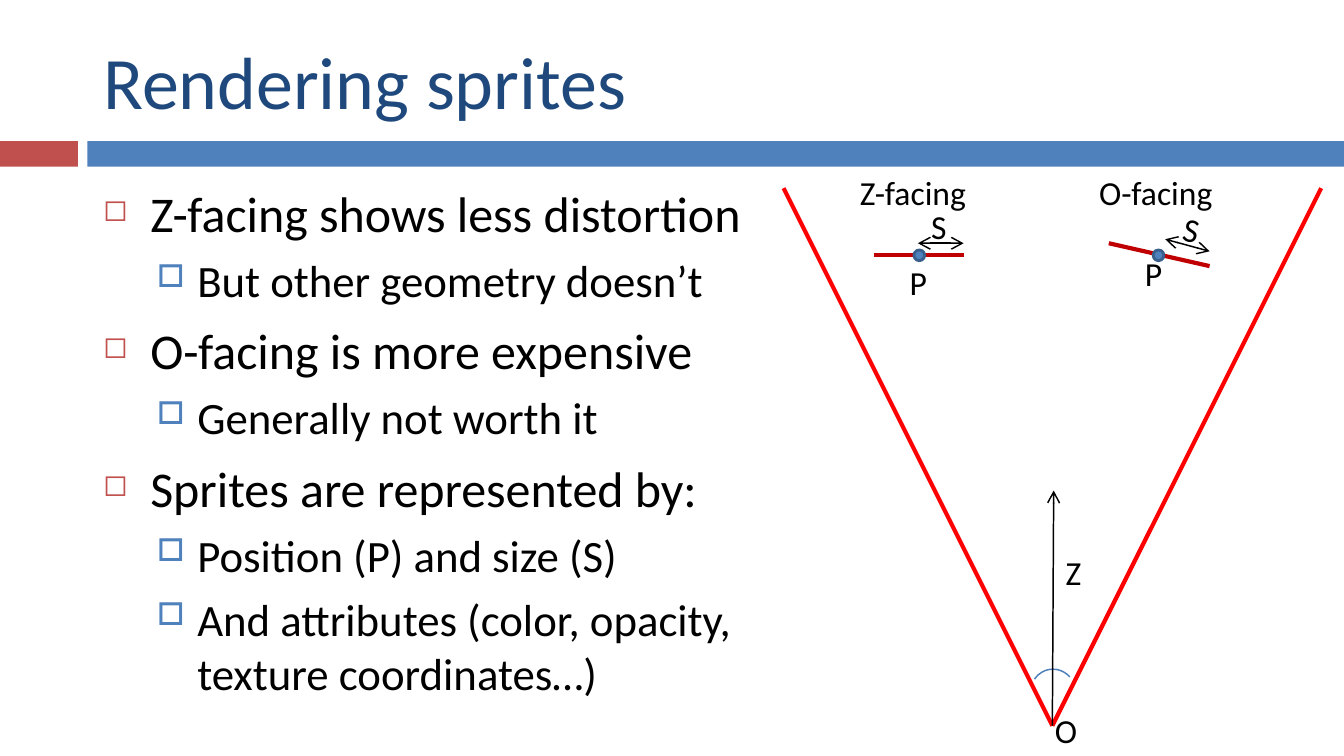
from pptx import Presentation
from pptx import util as u
from pptx.dml.color import RGBColor
from pptx.enum import shapes, text
from pptx.oxml.ns import qn
from lxml import etree

RED = RGBColor(0xC0, 0x50, 0x4D)
BLUE = RGBColor(0x4F, 0x81, 0xBD)
DARK_BLUE = RGBColor(0x3A, 0x5F, 0x8C)
NAVY = RGBColor(0x1F, 0x49, 0x7D)
BLACK = RGBColor(0, 0, 0)
FRUSTUM_RED = RGBColor(0xFF, 0, 0)
SPRITE_RED = RGBColor(0xC0, 0, 0)

# Paragraph formats by outline level
LEVELS = [
    dict(size=26.8, before=7, left=0.35, hanging=0.35, bullet="◻", color=RED, scale=60),
    dict(size=24.05, before=5.5, left=0.7, hanging=0.3, bullet="□", color=BLUE, scale=70),
]
POINTS = [
    (0, "Z-facing shows less distortion"),
    (1, "But other geometry doesn’t"),
    (0, "O-facing is more expensive"),
    (1, "Generally not worth it"),
    (0, "Sprites are represented by:"),
    (1, "Position (P) and size (S)"),
    (1, "And attributes (color, opacity, texture coordinates…)"),
]


def inches(*values):
    return [u.Inches(value) for value in values]


def set_font(font, size, color):
    values = {"name": "Calibri", "size": u.Pt(size)}
    for name, value in values.items():
        setattr(font, name, value)
    font.color.rgb = color


def add_text(slide, box, words="", size=18, color=BLACK, **frame_format):
    shape = slide.shapes.add_textbox(*inches(*box))
    for name, value in frame_format.items():
        setattr(shape.text_frame, name, value)
    paragraph = shape.text_frame.paragraphs[0]
    if words:
        run = paragraph.add_run()
        run.text = words
        set_font(run.font, size, color)
    return shape


def add_label(slide, box, words):
    return add_text(slide, box, words, word_wrap=False,
                    auto_size=text.MSO_AUTO_SIZE.SHAPE_TO_FIT_TEXT)


def add_preset(slide, preset, box, fill=None, line=None, width=1):
    shape = slide.shapes.add_shape(preset, *inches(*box))
    shape.shadow.inherit = False
    if fill is None:
        shape.fill.background()
    else:
        shape.fill.solid()
        shape.fill.fore_color.rgb = fill
    if line is None:
        shape.line.fill.background()
    else:
        shape.line.color.rgb = line
        shape.line.width = u.Pt(width)
    return shape


def add_line(slide, start, end, color=BLACK, width=0.79, arrows=()):
    line = slide.shapes.add_connector(
        shapes.MSO_CONNECTOR.STRAIGHT, *inches(*start, *end))
    line.line.color.rgb = color
    line.line.width = u.Pt(width)
    outline = line.line._get_or_add_ln()
    for end_name in arrows:
        etree.SubElement(outline, qn(f"a:{end_name}"), type="arrow")
    etree.SubElement(line._element.spPr, qn("a:effectLst"))
    return line


def set_bullet(paragraph, level):
    properties = paragraph._p.get_or_add_pPr()
    properties.set("marL", str(u.Inches(level["left"])))
    properties.set("indent", str(-u.Inches(level["hanging"])))
    color = etree.SubElement(properties, qn("a:buClr"))
    etree.SubElement(color, qn("a:srgbClr"), val=str(level["color"]))
    etree.SubElement(properties, qn("a:buSzPct"), val=str(level["scale"] * 1000))
    etree.SubElement(properties, qn("a:buChar"), char=level["bullet"])


def build_header(slide, left, top, width):
    # Title above a two-colour band
    for x, length, color in ((0, 0.58, RED), (0.65, width - 0.65, BLUE)):
        add_preset(slide, shapes.MSO_SHAPE.RECTANGLE,
                   (left + x, top + 1.05, length, 0.19), color)
    add_text(slide, (left + 0.67, top + 0.19, 8.92, 0.81), "Rendering sprites",
             39.6, NAVY, word_wrap=True, vertical_anchor=text.MSO_ANCHOR.MIDDLE)


def build_outline(slide, box):
    frame = add_text(slide, box, word_wrap=True).text_frame
    for index, (depth, words) in enumerate(POINTS):
        level = LEVELS[depth]
        paragraph = frame.add_paragraph() if index else frame.paragraphs[0]
        paragraph.level = depth
        paragraph.space_before = u.Pt(level["before"])
        set_bullet(paragraph, level)
        run = paragraph.add_run()
        run.text = words
        set_font(run.font, level["size"], BLACK)


def build_sprite(slide, left, top, name, name_width, plane, size_arrow, point, size_label, tilt=0):
    # The origin is the top left corner of the name; the rest is offset from it
    def place(x, y):
        return left + x, top + y

    add_line(slide, place(*plane[0]), place(*plane[1]), SPRITE_RED, 2.25)
    add_label(slide, (left, top, name_width, 0.4), name)
    add_preset(slide, shapes.MSO_SHAPE.OVAL, (*place(0.5, 0.63), 0.08, 0.08),
               BLUE, DARK_BLUE, 1.5)
    add_label(slide, (*place(*point), 0.33, 0.4), "P")
    add_line(slide, place(*size_arrow[0]), place(*size_arrow[1]),
             arrows=("headEnd", "tailEnd"))
    add_label(slide, (*place(*size_label), 0.33, 0.4), "S").rotation = tilt


def build_frustum(slide, left, top, width, height):
    middle, bottom = left + width / 2, top + height
    # Sides of the view and the angle at the eye
    for x in (left, left + width):
        add_line(slide, (x, top), (middle, bottom), FRUSTUM_RED, 2.25)
    angle = add_preset(slide, shapes.MSO_SHAPE.ARC,
                       (middle - 0.16, bottom - 0.42, 0.33, 0.33), None, BLUE, 0.79)
    angle.adjustments[0], angle.adjustments[1] = 128.21, 191.64

    # Two ways to face a sprite
    build_sprite(slide, left + 0.47, top - 0.17, "Z-facing", 1.04,
                 plane=((0.2, 0.67), (0.87, 0.67)),
                 size_arrow=((0.53, 0.58), (0.87, 0.58)),
                 point=(0.37, 0.67), size_label=(0.53, 0.25))
    build_sprite(slide, left + 2.25, top - 0.17, "O-facing", 1.1,
                 plane=((0.17, 0.58), (0.92, 0.75)),
                 size_arrow=((0.59, 0.55), (0.92, 0.64)),
                 point=(0.34, 0.6), size_label=(0.63, 0.28), tilt=12.9)

    # Eye and view axis
    add_label(slide, (middle - 0.08, bottom - 0.17, 0.4, 0.4), "O")
    add_line(slide, (middle, bottom), (middle + 0.01, bottom - 1.75), arrows=("tailEnd",))
    add_label(slide, (middle, bottom - 1.34, 0.33, 0.4), "Z")


def main():
    presentation = Presentation()
    # Widescreen, 16:9
    presentation.slide_width = u.Inches(10)
    presentation.slide_height = u.Inches(10 * 9 / 16)
    slide = presentation.slides.add_slide(presentation.slide_layouts[6])
    build_header(slide, 0, 0, 10)
    build_outline(slide, (0.67, 1.31, 5.66, 3.69))
    build_frustum(slide, 5.83, 1.4, 4, 4)
    presentation.save("out.pptx")


if __name__ == "__main__":
    main()
